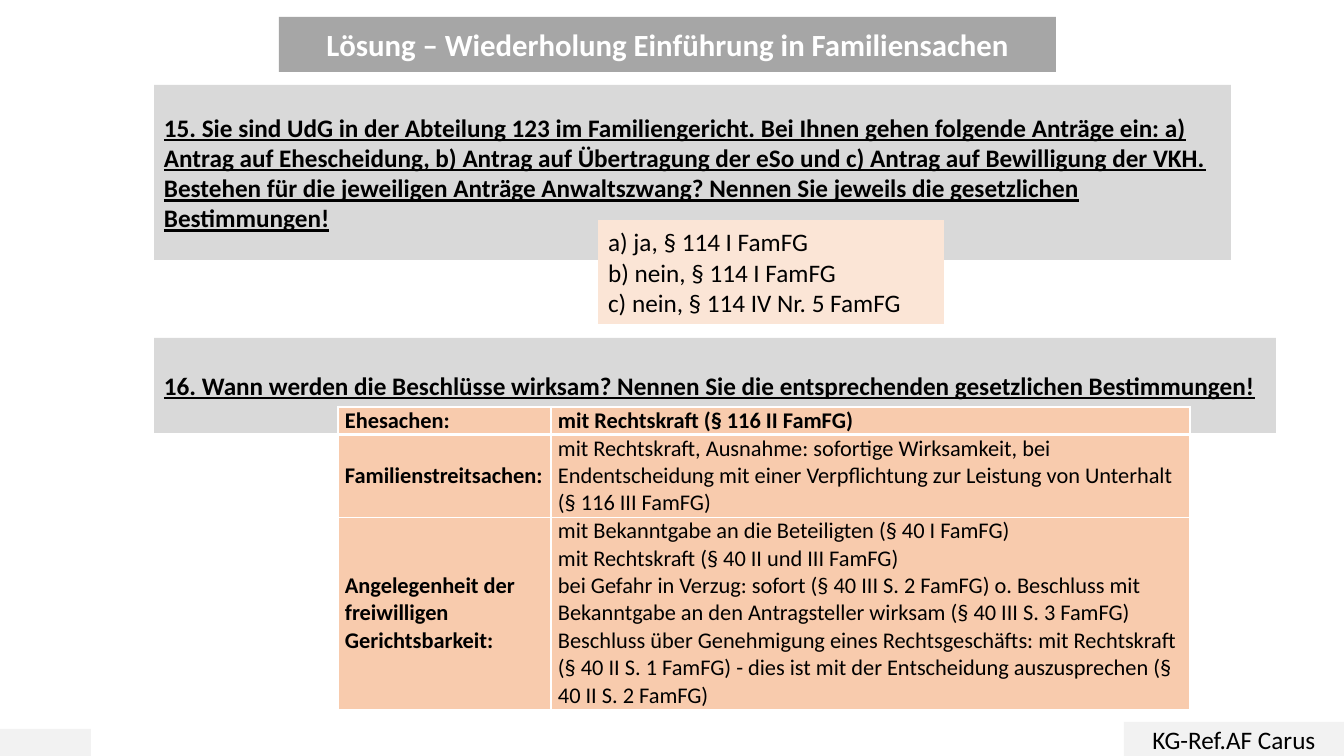
from typing import NamedTuple

from lxml import etree
from pptx import Presentation
from pptx import util as u
from pptx.dml.color import RGBColor
from pptx.enum import shapes, text
from pptx.oxml.ns import qn

EMU_PER_PX = 12192000 / 1344
FONT = "Calibri"
BLACK = RGBColor(0x00, 0x00, 0x00)
WHITE = RGBColor(0xFF, 0xFF, 0xFF)
TITLE_GRAY = RGBColor(0xA6, 0xA6, 0xA6)
QUESTION_GRAY = RGBColor(0xD9, 0xD9, 0xD9)
FOOTER_GRAY = RGBColor(0xF2, 0xF2, 0xF2)
ANSWER_PEACH = RGBColor(0xFB, 0xE5, 0xD6)
TABLE_PEACH = RGBColor(0xF8, 0xCB, 0xAD)
LEFT, CENTER = text.PP_ALIGN.LEFT, text.PP_ALIGN.CENTER


class Area(NamedTuple):
    left: int
    top: int
    width: int
    height: int


class Style(NamedTuple):
    size: int = 18
    color: RGBColor = BLACK
    bold: bool = False
    underline: bool = False
    align: text.PP_ALIGN = LEFT


class Panel(NamedTuple):
    area: Area
    fill: RGBColor
    wording: str = ""
    style: Style = Style()


class Ruling(NamedTuple):
    matter: list[str]
    effect: list[str]
    height: int
    effect_bold: bool = False


QUESTION = Style(bold=True, underline=True)
PANELS = [
    Panel(Area(154, 85, 1077, 175), QUESTION_GRAY,
          "15. Sie sind UdG in der Abteilung 123 im Familiengericht. Bei Ihnen gehen "
          "folgende Anträge ein: a) Antrag auf Ehescheidung, b) Antrag auf Übertragung "
          "der eSo und c) Antrag auf Bewilligung der VKH. Bestehen für die jeweiligen "
          "Anträge Anwaltszwang? Nennen Sie jeweils die gesetzlichen Bestimmungen!", QUESTION),
    Panel(Area(154, 338, 1122, 95), QUESTION_GRAY,
          "16. Wann werden die Beschlüsse wirksam? Nennen Sie die entsprechenden "
          "gesetzlichen Bestimmungen!", QUESTION),
    Panel(Area(0, 729, 91, 27), FOOTER_GRAY),
    Panel(Area(1124, 722, 220, 34), FOOTER_GRAY, "KG-Ref.AF Carus", Style(align=CENTER)),
]
ANSWERS = ["a) ja, § 114 I FamFG", "b) nein, § 114 I FamFG", "c) nein, § 114 IV Nr. 5 FamFG"]
RULINGS = [
    Ruling(["Ehesachen:"], ["mit Rechtskraft (§ 116 II FamFG)"], 27, True),
    Ruling(["Familienstreitsachen:"],
           ["mit Rechtskraft, Ausnahme: sofortige Wirksamkeit, bei Endentscheidung mit "
            "einer Verpflichtung zur Leistung von Unterhalt (§ 116 III FamFG)"], 83),
    Ruling(["Angelegenheit der freiwilligen", "Gerichtsbarkeit:"],
           ["mit Bekanntgabe an die Beteiligten (§ 40 I FamFG)",
            "mit Rechtskraft (§ 40 II und III FamFG)",
            "bei Gefahr in Verzug: sofort (§ 40 III S. 2 FamFG) o. Beschluss mit "
            "Bekanntgabe an den Antragsteller wirksam (§ 40 III S. 3 FamFG)",
            "Beschluss über Genehmigung eines Rechtsgeschäfts: mit Rechtskraft "
            "(§ 40 II S. 1 FamFG) - dies ist mit der Entscheidung auszusprechen "
            "(§ 40 II S. 2 FamFG)"], 191),
]
COLUMNS = [213, 639]


def px(length: int) -> u.Emu:
    return u.Emu(round(length * EMU_PER_PX))


def write(frame, lines: list[str], style: Style) -> None:
    frame.word_wrap = True
    for index, line in enumerate(lines):
        paragraph = frame.add_paragraph() if index else frame.paragraphs[0]
        paragraph.alignment = style.align
        run = paragraph.add_run()
        run.text = line
        font = run.font
        font.name, font.size = FONT, u.Pt(style.size)
        font.bold, font.underline = style.bold, style.underline
        font.color.rgb = style.color


def draw_panel(slide, panel: Panel) -> None:
    box = slide.shapes.add_shape(shapes.MSO_SHAPE.RECTANGLE, *map(px, panel.area))
    box.shadow.inherit = False
    box.fill.solid()
    box.fill.fore_color.rgb = panel.fill
    box.line.fill.background()
    if panel.wording:
        box.text_frame.vertical_anchor = text.MSO_ANCHOR.MIDDLE
        write(box.text_frame, [panel.wording], panel.style)


def fill_placeholder(holder, area: Area, fill: RGBColor, lines: list[str],
                     style: Style, outline: str = "rect") -> None:
    holder.left, holder.top, holder.width, holder.height = map(px, area)
    geometry = etree.SubElement(holder.element.spPr, qn("a:prstGeom"), prst=outline)
    etree.SubElement(geometry, qn("a:avLst"))
    holder.fill.solid()
    holder.fill.fore_color.rgb = fill
    frame = holder.text_frame
    frame.auto_size = text.MSO_AUTO_SIZE.NONE
    frame.vertical_anchor = text.MSO_ANCHOR.MIDDLE
    write(frame, lines, style)
    for paragraph in frame.paragraphs:
        paragraph.space_before = u.Pt(0)
        properties = paragraph._p.get_or_add_pPr()
        properties.set("marL", "0")
        properties.set("indent", "0")
        etree.SubElement(properties, qn("a:buNone"))


def set_borders(cell, top: int, bottom: int) -> None:
    """Draw white cell borders; widths are in points."""
    properties = cell._tc.get_or_add_tcPr()
    for side, width in (("L", 1), ("R", 1), ("T", top), ("B", bottom)):
        border = etree.SubElement(properties, qn(f"a:ln{side}"), w=str(u.Pt(width)))
        fill = etree.SubElement(border, qn("a:solidFill"))
        etree.SubElement(fill, qn("a:srgbClr"), val=str(WHITE))


def draw_rulings(slide) -> None:
    area = Area(338, 407, sum(COLUMNS), sum(ruling.height for ruling in RULINGS))
    table = slide.shapes.add_table(len(RULINGS), len(COLUMNS), *map(px, area)).table
    for column, width in zip(table.columns, COLUMNS):
        column.width = px(width)
    for index, ruling in enumerate(RULINGS):
        table.rows[index].height = px(ruling.height)
        contents = [(ruling.matter, True), (ruling.effect, ruling.effect_bold)]
        for cell, (lines, bold) in zip(table.rows[index].cells, contents):
            set_borders(cell, top=3 if index == 1 else 1, bottom=3 if index == 0 else 1)
            cell.fill.solid()
            cell.fill.fore_color.rgb = TABLE_PEACH
            cell.margin_left = cell.margin_right = px(7)
            cell.margin_top = cell.margin_bottom = 0
            cell.vertical_anchor = text.MSO_ANCHOR.MIDDLE
            write(cell.text_frame, lines, Style(size=16, bold=bold))


def main() -> None:
    deck = Presentation()
    deck.slide_width, deck.slide_height = px(1344), px(756)
    slide = deck.slides.add_slide(deck.slide_layouts[1])
    title, answers = slide.placeholders
    fill_placeholder(title, Area(279, 17, 777, 55), TITLE_GRAY,
                     ["Lösung – Wiederholung Einführung in Familiensachen"],
                     Style(22, WHITE, bold=True, align=CENTER), "roundRect")
    for panel in PANELS:
        draw_panel(slide, panel)
    fill_placeholder(answers, Area(598, 220, 346, 104), ANSWER_PEACH, ANSWERS, Style())
    # The answers overlap the first question and belong in front of it.
    answers.element.getparent().append(answers.element)
    draw_rulings(slide)
    deck.save("out.pptx")


if __name__ == "__main__":
    main()
